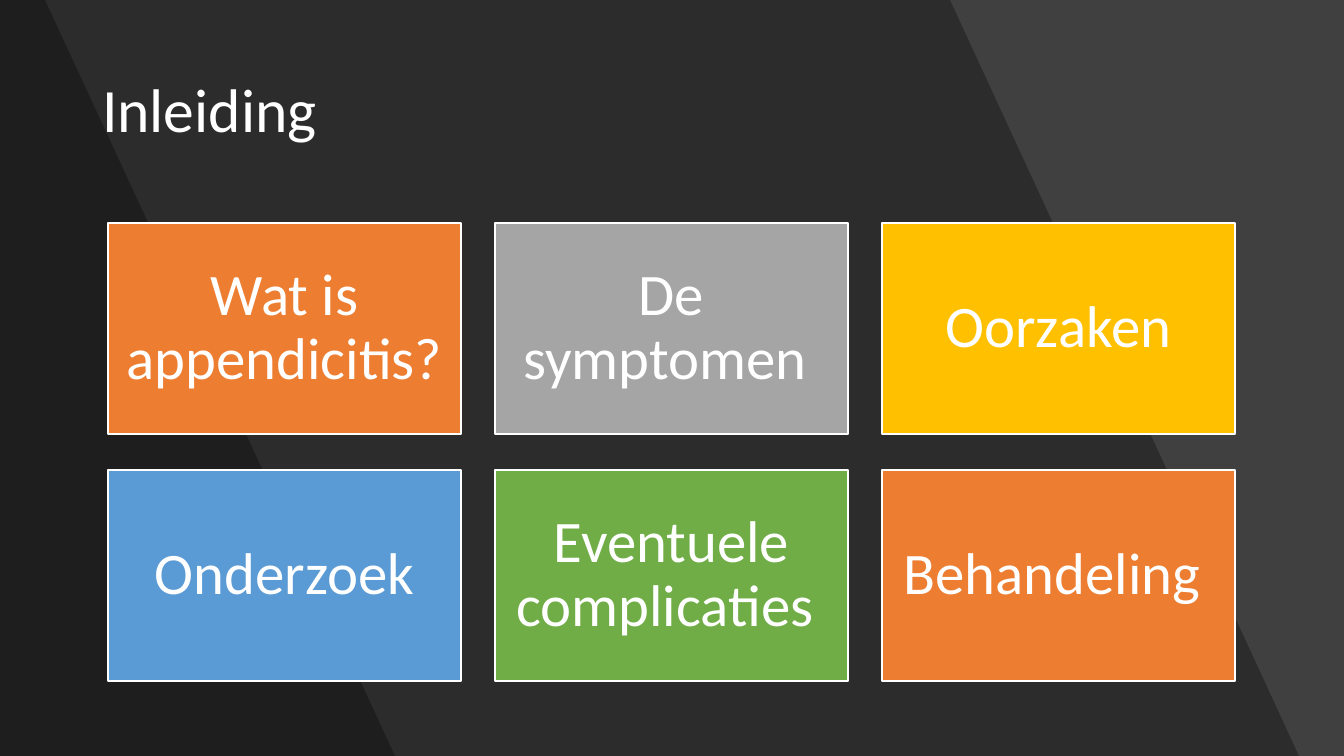
import pptx
import pptx.util
import pptx.dml.color
import pptx.enum.shapes
import pptx.enum.text
from dataclasses import dataclass
from lxml import etree

TITLE = "Inleiding"
TOPICS = [
    "Wat is appendicitis?", "De symptomen ", "Oorzaken",
    "Onderzoek", "Eventuele complicaties ", "Behandeling ",
]

WIDE, HIGH = 1344, 756
PX = 12192000 / WIDE
BANDS = [(950, 1299), (45, 395)]  # right edge at top and at bottom
HEAD = (92, 40, 1160, 146)
COLS = 3
LEFT, TOP = 108, 223
CARD_W, CARD_H = 353, 211
GAP_X, GAP_Y = 34, 36
INSET = 17


@dataclass(frozen=True)
class Theme:
    back: str = "404040"
    shade: str = "000000"
    alpha: int = 30
    text: str = "FFFFFF"
    cards: tuple = ("ED7D31", "A5A5A5", "FFC000", "5B9BD5", "70AD47")
    font: str = "Calibri"
    head: int = 44
    body: int = 42


THEME = Theme()


def emu(px):
    return pptx.util.Emu(round(px * PX))


def paint(fill, color):
    fill.solid()
    fill.fore_color.rgb = pptx.dml.color.RGBColor.from_string(color)


def write(frame, text, size, align, inset=None):
    frame.text = text
    frame.word_wrap = True
    frame.auto_size = pptx.enum.text.MSO_AUTO_SIZE.NONE
    frame.vertical_anchor = pptx.enum.text.MSO_ANCHOR.MIDDLE
    if inset is not None:
        frame.margin_left = frame.margin_right = emu(inset)
        frame.margin_top = frame.margin_bottom = emu(inset)
    para = frame.paragraphs[0]
    para.alignment = align
    para.line_spacing = 0.9
    para.space_before = pptx.util.Pt(0)
    para.font.name = THEME.font
    para.font.size = pptx.util.Pt(size)
    para.font.color.rgb = pptx.dml.color.RGBColor.from_string(THEME.text)


def add_band(slide, upper, lower):
    """Shade the slide from its left side to a slanted edge."""
    pen = slide.shapes.build_freeform(0, 0, scale=PX)
    pen.add_line_segments([(upper, 0), (lower, HIGH), (0, HIGH)], close=True)
    band = pen.convert_to_shape()
    band.shadow.inherit = False
    band.line.fill.background()
    paint(band.fill, THEME.shade)
    color = band.fill._xPr.find(".//" + pptx.oxml.ns.qn("a:srgbClr"))
    alpha = etree.SubElement(color, pptx.oxml.ns.qn("a:alpha"))
    alpha.set("val", str(THEME.alpha * 1000))


def add_title(slide):
    title = slide.shapes.title
    title.left, title.top, title.width, title.height = map(emu, HEAD)
    write(title.text_frame, TITLE, THEME.head, pptx.enum.text.PP_ALIGN.LEFT)


def add_card(slide, index, topic):
    row, col = divmod(index, COLS)
    x = LEFT + col * (CARD_W + GAP_X)
    y = TOP + row * (CARD_H + GAP_Y)
    card = slide.shapes.add_shape(
        pptx.enum.shapes.MSO_SHAPE.RECTANGLE,
        emu(x), emu(y), emu(CARD_W), emu(CARD_H))
    card.shadow.inherit = False
    paint(card.fill, THEME.cards[index % len(THEME.cards)])
    paint(card.line.fill, THEME.text)
    card.line.width = pptx.util.Pt(1)
    write(card.text_frame, topic, THEME.body,
          pptx.enum.text.PP_ALIGN.CENTER, INSET)


def main():
    deck = pptx.Presentation()
    deck.slide_width, deck.slide_height = emu(WIDE), emu(HIGH)
    slide = deck.slides.add_slide(deck.slide_layouts[5])
    paint(slide.background.fill, THEME.back)
    for upper, lower in BANDS:
        add_band(slide, upper, lower)
    # The title sits in front of the bands.
    slide.shapes._spTree.append(slide.shapes.title._element)
    add_title(slide)
    for index, topic in enumerate(TOPICS):
        add_card(slide, index, topic)
    deck.save("out.pptx")


if __name__ == "__main__":
    main()
